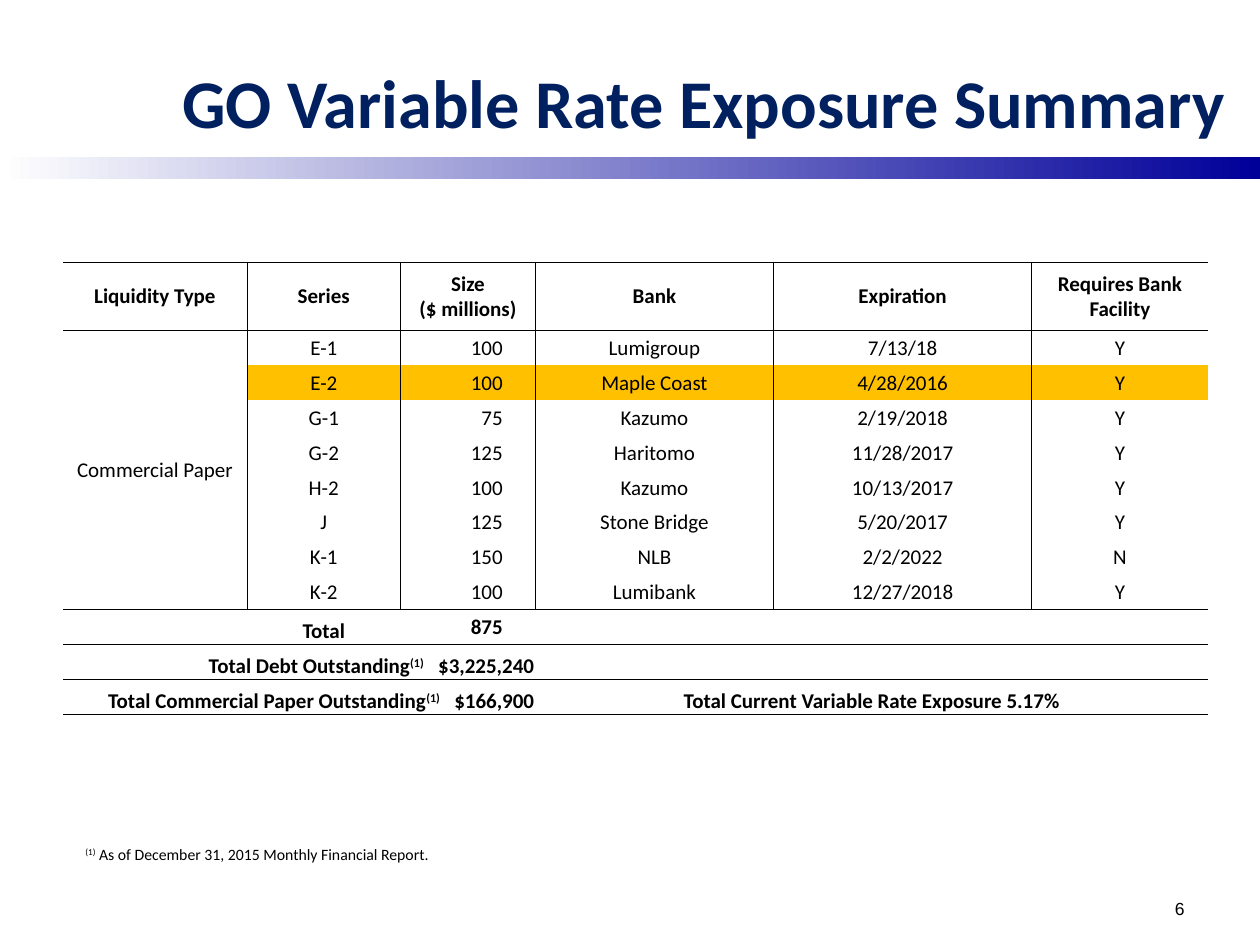
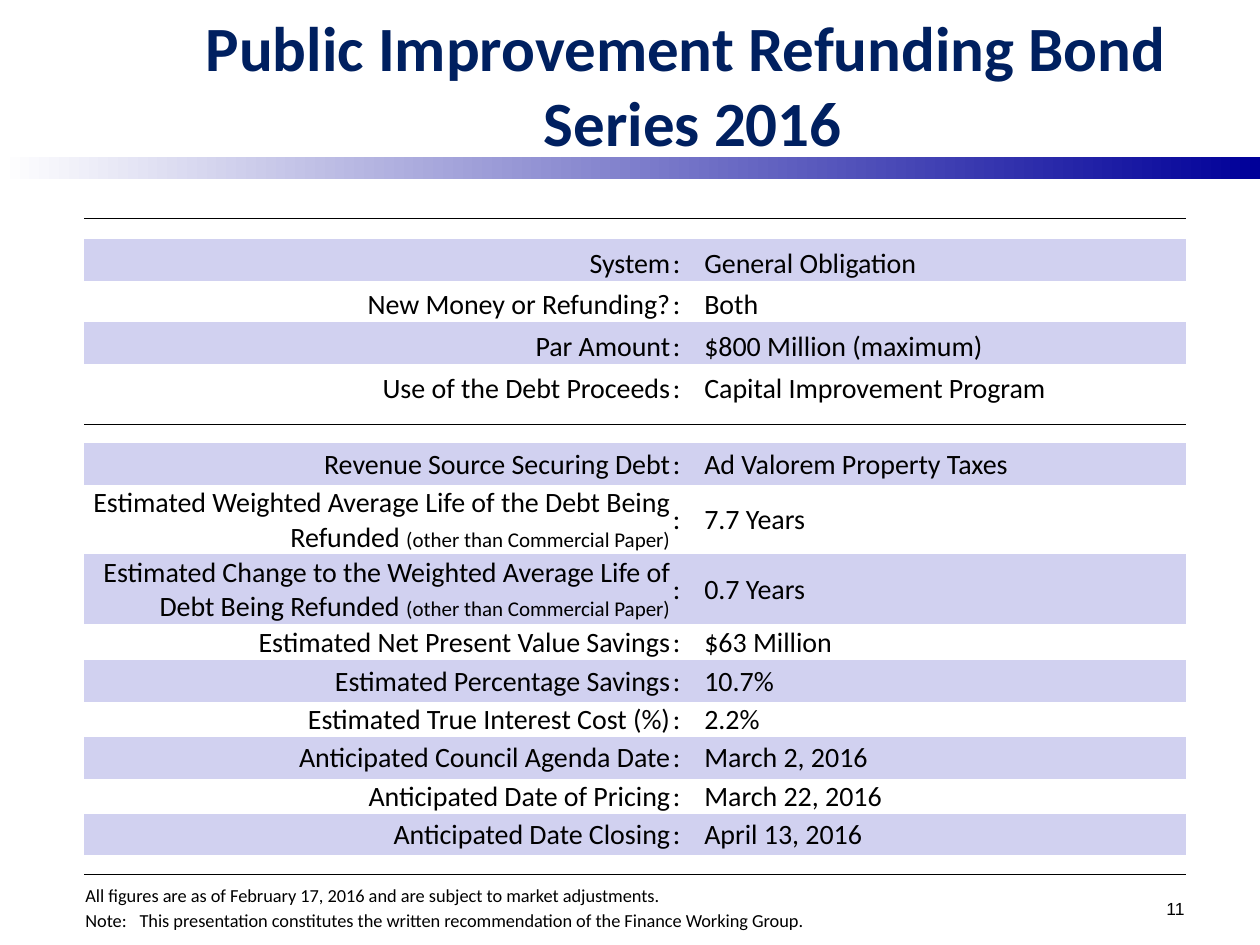
"""Build two debt summary slides: variable rate exposure and refunding bond terms."""
import pptx
import pptx.dml.color
import pptx.enum.shapes
import pptx.enum.text
import pptx.oxml
import pptx.oxml.ns
import pptx.util

Inches = pptx.util.Inches
Pt = pptx.util.Pt
ALIGN = pptx.enum.text.PP_ALIGN
ANCHOR = pptx.enum.text.MSO_ANCHOR

COLORS = {
    "text": "000000",
    "title": "002060",
    "band_start": "FFFFFF",
    "band_end": "000099",
    "highlight": "FFC000",
    "stripe": "D1D1F0",
}
FONT = "Calibri"

HEADERS = ["Liquidity Type", "Series", "Size\v($ millions)", "Bank", "Expiration",
           "Requires Bank Facility"]
PAPER = [
    ("E-1", "100", "Lumigroup", "7/13/18", "Y"),
    ("E-2", "100", "Maple Coast", "4/28/2016", "Y"),
    ("G-1", "75", "Kazumo", "2/19/2018", "Y"),
    ("G-2", "125", "Haritomo", "11/28/2017", "Y"),
    ("H-2", "100", "Kazumo", "10/13/2017", "Y"),
    ("J", "125", "Stone Bridge", "5/20/2017", "Y"),
    ("K-1", "150", "NLB", "2/2/2022", "N"),
    ("K-2", "100", "Lumibank", "12/27/2018", "Y"),
]
OUTSTANDING = [
    ("Total Debt Outstanding", "$3,225,240"),
    ("Total Commercial Paper Outstanding", "$166,900"),
]
OTHER_THAN_CP = "(other than Commercial Paper)"
BASICS = [
    ("System", "General Obligation"),
    ("New Money or Refunding?", "Both"),
    ("Par Amount", "$800 Million (maximum)"),
    ("Use of the Debt Proceeds", "Capital Improvement Program"),
]
ESTIMATES = [
    ("Revenue Source Securing Debt", "Ad Valorem Property Taxes"),
    ("Estimated Weighted Average Life of the Debt Being Refunded ", "7.7 Years"),
    ("Estimated Change to the Weighted Average Life of Debt Being Refunded ", "0.7 Years"),
    ("Estimated Net Present Value Savings", "$63 Million"),
    ("Estimated Percentage Savings", "10.7%"),
    ("Estimated True Interest Cost (%)", "2.2%"),
    ("Anticipated Council Agenda Date", "March 2, 2016"),
    ("Anticipated Date of Pricing", "March 22, 2016"),
    ("Anticipated Date Closing", "April 13, 2016"),
]
TERM_COLUMNS = [4.66, 0.25, 0.68, 1.42, 0.05, 0.14, 0.84, 0.7]
TERM_SPANS = {
    (0,): [(3, 4), (5, 6)],
    (1, 4, 7): [(2, 6)],
    (2, 3): [(2, 7)],
    (5, 6, 16): [(3, 5)],
    (8, 9, 10, 15): [(2, 5)],
    (11, 12, 13): [(2, 5), (6, 7)],
    (14,): [(2, 3), (4, 5)],
}


def rgb(name):
    return pptx.dml.color.RGBColor.from_string(COLORS[name])


def format_run(r, size, bold=False, color="text", font=FONT):
    r.font.name = font
    r.font.size = Pt(size)
    r.font.bold = bold
    r.font.color.rgb = rgb(color)


def set_text(p, text, size, **style):
    p.text = text
    for r in p.runs:
        format_run(r, size, **style)


def add_run(p, text, size, bold=False, **attrs):
    r = p.add_run()
    r.text = text
    format_run(r, size, bold)
    for name, value in attrs.items():
        r.font._element.set(name, str(value))


def add_text(s, left, top, width, height):
    sp = s.shapes.add_textbox(Inches(left), Inches(top), Inches(width), Inches(height))
    sp.text_frame.word_wrap = True
    return sp.text_frame.paragraphs[0]


def add_slide(prs, title, box, size, number):
    s = prs.slides.add_slide(prs.slide_layouts[5])
    sp = s.shapes.title
    sp.left, sp.top, sp.width, sp.height = [Inches(v) for v in box]
    tf = sp.text_frame
    tf.text = title
    tf.word_wrap = True
    tf.auto_size = pptx.enum.text.MSO_AUTO_SIZE.NONE
    tf.vertical_anchor = ANCHOR.MIDDLE
    p = tf.paragraphs[0]
    p.alignment = ALIGN.CENTER
    for r in p.runs:
        format_run(r, size, bold=True, color="title")
    add_band(s)
    p = add_text(s, 7.17, 7.08, 2.33, 0.27)
    p.alignment = ALIGN.RIGHT
    set_text(p, number, 10, font="Arial")
    return s


def add_band(s):
    sp = s.shapes.add_shape(pptx.enum.shapes.MSO_SHAPE.RECTANGLE,
                            0, Inches(1.25), Inches(10), Inches(0.17))
    sp.shadow.inherit = False
    sp.line.fill.background()
    sp.fill.gradient()
    sp.fill.gradient_angle = 0
    for stop, name in zip(sp.fill.gradient_stops, ("band_start", "band_end")):
        stop.color.rgb = rgb(name)


def set_borders(cell, widths):
    tc_pr = cell._tc.get_or_add_tcPr()
    for side in "LRTB":
        width = widths.get(side, 0)
        fill = (f'<a:solidFill><a:srgbClr val="{COLORS["text"]}"/></a:solidFill>'
                if width else "<a:noFill/>")
        tc_pr.append(pptx.oxml.parse_xml(
            f'<a:ln{side} {pptx.oxml.ns.nsdecls("a")} w="{Pt(width)}">{fill}</a:ln{side}>'))


def add_table(s, left, top, widths, heights, rules, divided_rows=()):
    rows, cols = len(heights), len(widths)
    frame = s.shapes.add_table(rows, cols, Inches(left), Inches(top),
                               Inches(sum(widths)), Inches(sum(heights)))
    table = frame.table
    table.first_row = table.horz_banding = False
    for column, width in zip(table.columns, widths):
        column.width = Inches(width)
    for i, height in enumerate(heights):
        table.rows[i].height = Inches(height)
        for j in range(cols):
            cell = table.cell(i, j)
            divider = 0.5 if i in divided_rows else 0
            set_borders(cell, {"T": rules.get(i, 0), "B": rules.get(i + 1, 0),
                               "L": divider if j else 0,
                               "R": divider if j < cols - 1 else 0})
            cell.fill.background()
            cell.margin_left = cell.margin_right = cell.margin_top = Inches(0.01)
            cell.margin_bottom = 0
            end = cell.text_frame.paragraphs[0]._p.get_or_add_endParaRPr()
            end.set("sz", "800")
    return table


def fill_cell(cell, text, size, align=ALIGN.CENTER, anchor=ANCHOR.MIDDLE, bold=False):
    cell.vertical_anchor = anchor
    p = cell.text_frame.paragraphs[0]
    p.alignment = align
    set_text(p, text, size, bold=bold)
    return p


def shade(cell, color):
    cell.fill.solid()
    cell.fill.fore_color.rgb = rgb(color)


def fill_size(cell, text, bold=False):
    fill_cell(cell, text, 12, ALIGN.RIGHT, bold=bold)
    cell.margin_right = Inches(0.26)


def add_exposure_table(s):
    header, total = 0.54, len(PAPER) + 1
    count = total + len(OUTSTANDING)
    heights = [header] + [(3.59 - header) / count] * count
    rules = {0: 0.5, 1: 0.5, total: 0.5, total + 1: 1, total + 2: 0.5, total + 3: 0.5}
    table = add_table(s, 0.5, 2.08, [1.46, 1.22, 1.07, 1.89, 2.05, 1.4], heights,
                      rules, range(total))
    for j, text in enumerate(HEADERS):
        fill_cell(table.cell(0, j), text, 12, bold=True)
    table.cell(1, 0).merge(table.cell(total - 1, 0))
    fill_cell(table.cell(1, 0), "Commercial Paper", 12)
    for i, row in enumerate(PAPER, 1):
        for j, text in enumerate(row, 1):
            cell = table.cell(i, j)
            if j == 2:
                fill_size(cell, text)
            else:
                fill_cell(cell, text, 12)
            if row[0] == "E-2":
                shade(cell, "highlight")
    fill_cell(table.cell(total, 1), "Total", 12, anchor=ANCHOR.BOTTOM, bold=True)
    fill_size(table.cell(total, 2), "875", bold=True)
    for i, (label, amount) in enumerate(OUTSTANDING, total + 1):
        for j in (0, 3):
            table.cell(i, j).merge(table.cell(i, j + 2))
        p = fill_cell(table.cell(i, 0), label, 12, ALIGN.RIGHT, ANCHOR.BOTTOM, True)
        add_run(p, "(1)", 12, True, baseline=30000)
        add_run(p, " ", 12, True, spc=540)
        add_run(p, amount, 12, True)
    fill_cell(table.cell(count, 3), "Total Current Variable Rate Exposure 5.17%", 12,
              anchor=ANCHOR.BOTTOM, bold=True)


def add_terms(table, first, terms, anchor):
    for i, (label, value) in enumerate(terms, first):
        p = fill_cell(table.cell(i, 0), label, 16, ALIGN.RIGHT, anchor)
        if label.endswith(" "):
            add_run(p, OTHER_THAN_CP, 12)
        for j, text in enumerate((":", value), 1):
            fill_cell(table.cell(i, j), text, 16, ALIGN.LEFT, anchor)
        if (i - first) % 2 == 0:
            for j in range(len(TERM_COLUMNS)):
                shade(table.cell(i, j), "stripe")


def add_terms_table(s):
    heights = ([0.17] + [0.33] * 4 + [0.15] * 2 + [0.33, 0.55, 0.55]
               + [0.29, 0.33] + [0.28, 0.33] * 2 + [0.15])
    table = add_table(s, 0.67, 1.73, TERM_COLUMNS, heights,
                      {0: 0.5, 6: 0.5, len(heights): 1})
    for rows, spans in TERM_SPANS.items():
        for i in rows:
            for start, end in spans:
                table.cell(i, start).merge(table.cell(i, end))
    add_terms(table, 1, BASICS, ANCHOR.BOTTOM)
    add_terms(table, 7, ESTIMATES, ANCHOR.MIDDLE)


def add_tab_stop(p, position):
    p._p.get_or_add_pPr().append(pptx.oxml.parse_xml(
        f'<a:tabLst {pptx.oxml.ns.nsdecls("a")}>'
        f'<a:tab pos="{Inches(position)}" algn="l"/></a:tabLst>'))


def main():
    prs = pptx.Presentation()
    prs.slide_width, prs.slide_height = Inches(10), Inches(7.5)

    s = add_slide(prs, "GO Variable Rate Exposure Summary", (1.17, 0.27, 8.83, 1.07), 39, "6")
    add_exposure_table(s)
    p = add_text(s, 0.58, 6.67, 8.42, 0.67)
    p.line_spacing = 0.9
    add_run(p, "(1)", 9, baseline=30000)
    add_run(p, " As of December 31, 2015 Monthly Financial Report.", 9)

    s = add_slide(prs, "Public Improvement Refunding Bond \vSeries 2016",
                  (1, 0.08, 9, 1.17), 36, "11")
    add_terms_table(s)
    p = add_text(s, 0.58, 6.97, 9.17, 0.28)
    set_text(p, "All figures are as of February 17, 2016 and are subject to market adjustments.",
             10.5)
    p = add_text(s, 0.58, 7.17, 8.83, 0.33)
    add_tab_stop(p, 0.43)
    set_text(p, "Note:\tThis presentation constitutes the written recommendation of the "
                "Finance Working Group.", 10.5)
    prs.save("out.pptx")


if __name__ == "__main__":
    main()
